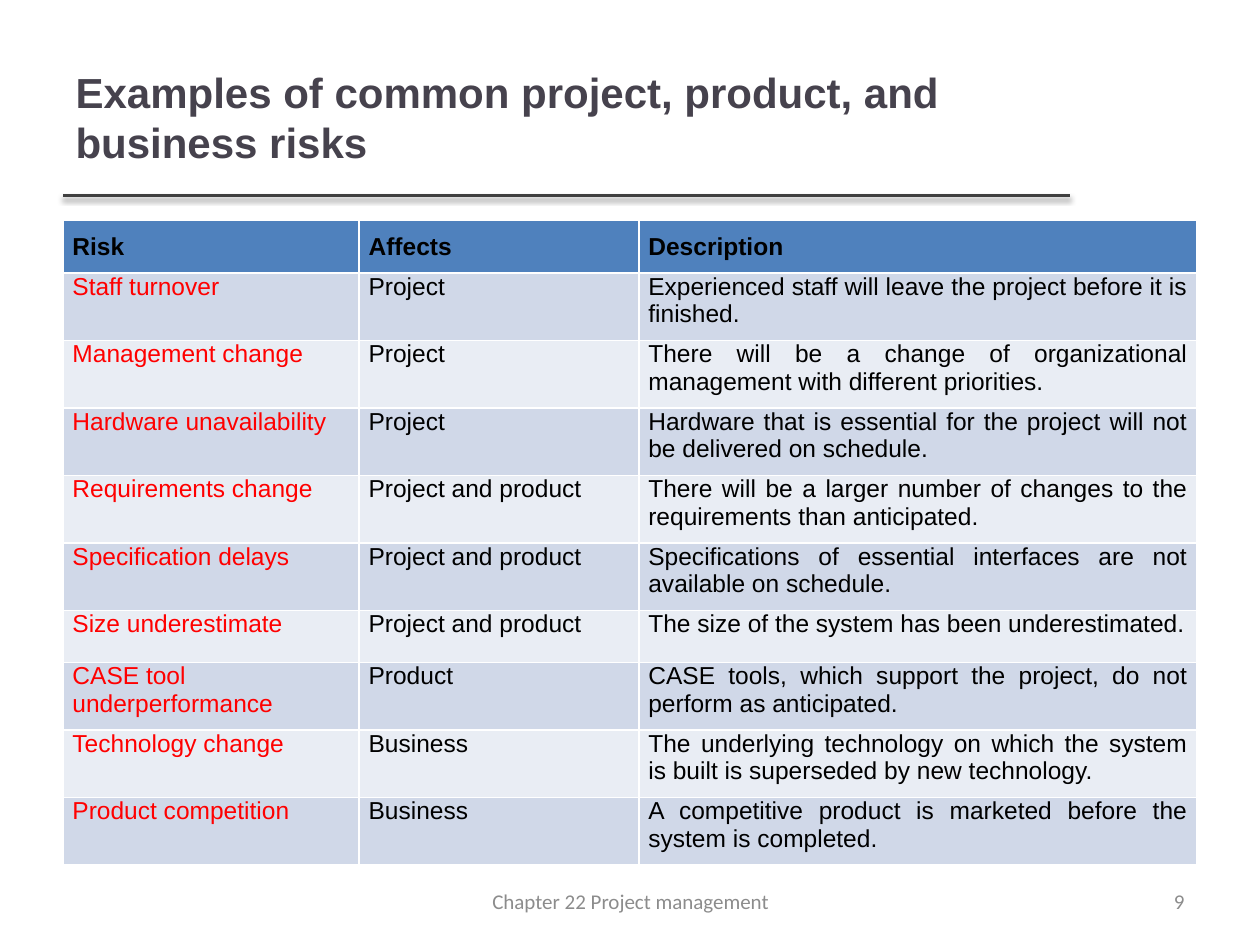
from lxml import etree
from pptx import Presentation
from pptx.dml.color import RGBColor
from pptx.enum.shapes import MSO_CONNECTOR
from pptx.enum.text import MSO_ANCHOR, MSO_AUTO_SIZE, PP_ALIGN
from pptx.oxml import parse_xml
from pptx.util import Cm, Pt

LEFT = PP_ALIGN.LEFT
CENTER = PP_ALIGN.CENTER
RIGHT = PP_ALIGN.RIGHT
JUSTIFY = PP_ALIGN.JUSTIFY
MIDDLE = MSO_ANCHOR.MIDDLE
NO_AUTOFIT = MSO_AUTO_SIZE.NONE
STRAIGHT = MSO_CONNECTOR.STRAIGHT

MARGIN = 1.27
COLUMN_WIDTHS = (5.97, 5.64, 11.25)
ROW_HEIGHT = 1.04
BAND_FILLS = ("D0D8E8", "E9EDF4")
HEADINGS = ("Risk", "Affects", "Description")
RISKS = (
    ("Staff turnover", "Project",
     "Experienced staff will leave the project before it is finished."),
    ("Management change", "Project",
     "There will be a change of organizational management with different priorities."),
    ("Hardware unavailability", "Project",
     "Hardware that is essential for the project will not be delivered on schedule."),
    ("Requirements change", "Project and product",
     "There will be a larger number of changes to the requirements than anticipated."),
    ("Specification delays", "Project and product",
     "Specifications of essential interfaces are not available on schedule."),
    ("Size underestimate", "Project and product",
     "The size of the system has been underestimated."),
    ("CASE tool underperformance", "Product",
     "CASE tools, which support the project, do not perform as anticipated."),
    ("Technology change", "Business",
     "The underlying technology on which the system is built is superseded by new technology."),
    ("Product competition", "Business",
     "A competitive product is marketed before the system is completed."),
)
SHADOW = (
    '<a:effectLst xmlns:a="http://schemas.openxmlformats.org/drawingml/2006/main">'
    '<a:outerShdw blurRad="40000" dist="20000" dir="5400000" rotWithShape="0">'
    '<a:srgbClr val="000000"><a:alpha val="38000"/></a:srgbClr>'
    '</a:outerShdw></a:effectLst>'
)


def color(value):
    return RGBColor.from_string(value)


def write_text(text_frame, text, size=14, font="Arial", fill="000000",
               bold=False, align=LEFT):
    paragraph = text_frame.paragraphs[0]
    paragraph.alignment = align
    run = paragraph.add_run()
    run.text = text
    run.font.size = Pt(size)
    run.font.name = font
    run.font.bold = bold
    run.font.color.rgb = color(fill)


def set_title(slide, text):
    title = slide.shapes.title
    title.left, title.top = Cm(MARGIN), Cm(0.76)
    title.width, title.height = Cm(20.27), Cm(3.18)
    text_frame = title.text_frame
    text_frame.auto_size = NO_AUTOFIT
    text_frame.vertical_anchor = MIDDLE
    write_text(text_frame, text, size=24, fill="46424D", bold=True)


def add_rule(slide):
    rule = slide.shapes.add_connector(
        STRAIGHT, Cm(MARGIN), Cm(3.94), Cm(21.56), Cm(3.94))
    rule.line.color.rgb = color("404040")
    rule.line.width = Pt(2)
    rule._element.spPr.append(parse_xml(SHADOW))


def fill_cell(cell, text, background, top=0.0, **text_format):
    cell.margin_left = cell.margin_right = Cm(0.19)
    cell.margin_top, cell.margin_bottom = Cm(top), Cm(0.25)
    cell.fill.solid()
    cell.fill.fore_color.rgb = color(background)
    write_text(cell.text_frame, text, **text_format)


def add_risk_table(slide):
    row_count = len(RISKS) + 1
    table = slide.shapes.add_table(
        row_count, len(HEADINGS), Cm(MARGIN), Cm(4.45),
        Cm(sum(COLUMN_WIDTHS)), Cm(ROW_HEIGHT * row_count)).table
    for column, width in zip(table.columns, COLUMN_WIDTHS):
        column.width = Cm(width)
    for row in table.rows:
        row.height = Cm(ROW_HEIGHT)
    for column_index, heading in enumerate(HEADINGS):
        fill_cell(table.cell(0, column_index), heading, "4F81BD", top=0.25,
                  bold=True, align=JUSTIFY)
    for row_index, (risk, affects, description) in enumerate(RISKS, start=1):
        background = BAND_FILLS[(row_index - 1) % 2]
        fill_cell(table.cell(row_index, 0), risk, background, fill="FF0000")
        fill_cell(table.cell(row_index, 1), affects, background)
        fill_cell(table.cell(row_index, 2), description, background, align=JUSTIFY)


def add_footer(slide, text, left, width, align):
    shape = slide.shapes.add_textbox(Cm(left), Cm(17.65), Cm(width), Cm(1.02))
    shape.text_frame.word_wrap = True
    shape.text_frame.vertical_anchor = MIDDLE
    write_text(shape.text_frame, text, size=12, font="Calibri", fill="8C8C8C", align=align)


def main():
    presentation = Presentation()
    presentation.slide_width, presentation.slide_height = Cm(25.4), Cm(19.05)
    slide = presentation.slides.add_slide(presentation.slide_layouts[5])
    add_rule(slide)
    set_title(slide, "Examples of common project, product, and business risks")
    add_risk_table(slide)
    add_footer(slide, "9", 18.21, 5.92, RIGHT)
    add_footer(slide, "Chapter 22 Project management", 8.69, 8.05, CENTER)
    presentation.save("out.pptx")


if __name__ == "__main__":
    main()
